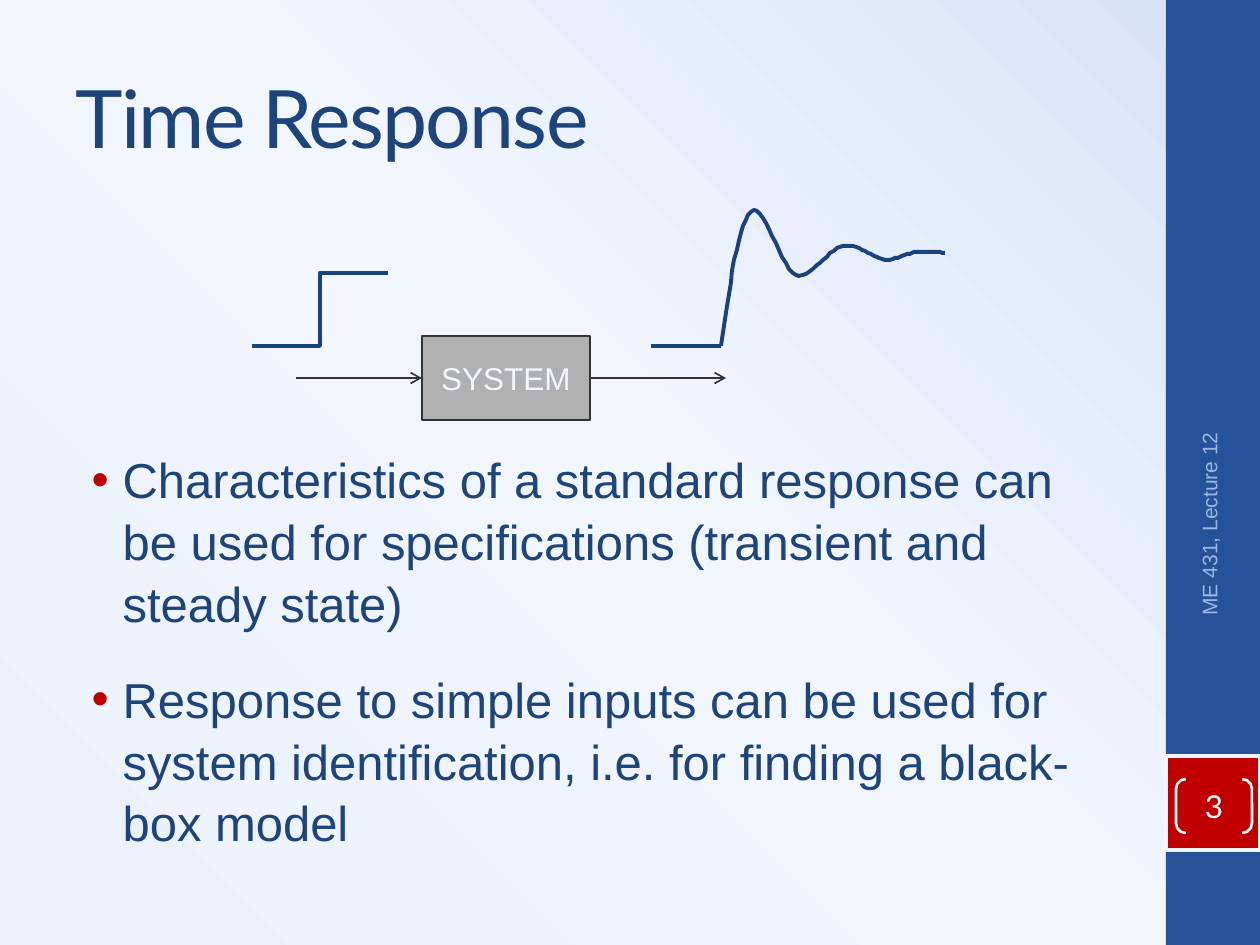
from pptx import Presentation
from pptx.dml.color import RGBColor
from pptx.enum.shapes import MSO_CONNECTOR, MSO_SHAPE
from pptx.enum.text import MSO_ANCHOR, MSO_AUTO_SIZE, PP_ALIGN
from pptx.oxml import parse_xml
from pptx.oxml.ns import nsdecls, qn
from pptx.util import Pt

PX = 914400 / 126  # EMU in one px
STRAIGHT, ELBOW = MSO_CONNECTOR.STRAIGHT, MSO_CONNECTOR.ELBOW
RECTANGLE, BRACKETS = MSO_SHAPE.RECTANGLE, MSO_SHAPE.DOUBLE_BRACKET
TOP, MIDDLE = MSO_ANCHOR.TOP, MSO_ANCHOR.MIDDLE
LEFT, CENTER, RIGHT = PP_ALIGN.LEFT, PP_ALIGN.CENTER, PP_ALIGN.RIGHT

NAVY = RGBColor(0x1E, 0x44, 0x7C)
CURVE_BLUE = RGBColor(0x1B, 0x42, 0x7C)
BAND_BLUE = RGBColor(0x26, 0x53, 0x97)
PALE_BLUE = RGBColor(0x98, 0xB7, 0xE5)
ICE = RGBColor(0xF2, 0xF6, 0xFC)
RED = RGBColor(0xC0, 0x00, 0x00)
GRAY = RGBColor(0xB0, 0xB0, 0xB0)
DARK = RGBColor(0x33, 0x33, 0x33)
WHITE = RGBColor(0xFF, 0xFF, 0xFF)

BACKDROP = [(0, "EAF1FA"), (52, "F1F6FD"), (100, "D6E2F5")]
BULLETS = [
    "Characteristics of a standard response can be used for specifications "
    "(transient and steady state)",
    "Response to simple inputs can be used for system identification, "
    "i.e. for finding a black-box model",
]
# Damped oscillation: a start point, then Bezier segments of three points
RESPONSE = [
    (469, 148),
    (478, 87), (486, 25), (499, 14),
    (512, 1), (528, 70), (544, 77),
    (559, 82), (577, 50), (591, 48),
    (606, 45), (620, 60), (633, 62),
    (645, 62), (656, 54), (667, 54),
    (677, 53), (685, 54), (693, 55),
]


def px(length):
    return round(length * PX)


def place(shape, left, top, width, height):
    shape.left, shape.top = px(left), px(top)
    shape.width, shape.height = px(width), px(height)


def write(para, text, font, size, color, align=LEFT):
    para.alignment = align
    span = para.add_run()
    span.text = text
    span.font.name, span.font.size = font, Pt(size)
    span.font.color.rgb = color
    return span


def add_box(page, kind, box, fill=None, line=None, weight=1):
    shape = page.shapes.add_shape(kind, *map(px, box))
    shape.shadow.inherit = False
    if fill is None:
        shape.fill.background()
    else:
        shape.fill.solid()
        shape.fill.fore_color.rgb = fill
    if line is None:
        shape.line.fill.background()
    else:
        shape.line.color.rgb, shape.line.width = line, Pt(weight)
    shape.text_frame.vertical_anchor = MIDDLE
    return shape


def add_line(page, start, end, color, weight, kind=STRAIGHT, arrow=False):
    line = page.shapes.add_connector(kind, *map(px, start + end))
    line.line.color.rgb, line.line.width = color, Pt(weight)
    if arrow:
        line.line._get_or_add_ln().append(
            parse_xml(f'<a:tailEnd {nsdecls("a")} type="arrow"/>'))
    line._element.spPr.append(parse_xml(f'<a:effectLst {nsdecls("a")}/>'))


def bezier_points(points, steps=14):
    for first in range(0, len(points) - 1, 3):
        a, b, c, d = points[first:first + 4]
        for step in range(1, steps + 1):
            t = step / steps
            u = 1 - t
            yield tuple(u**3 * a[i] + 3 * u * u * t * b[i] + 3 * u * t * t * c[i]
                        + t**3 * d[i] for i in (0, 1))


def paint_background(page):
    page.background.fill.solid()
    properties = page._element.cSld.find(qn("p:bg")).find(qn("p:bgPr"))
    stops = "".join(f'<a:gs pos="{at * 1000}"><a:srgbClr val="{color}"/></a:gs>'
                    for at, color in BACKDROP)
    properties.replace(properties[0], parse_xml(
        f'<a:gradFill {nsdecls("a")} rotWithShape="1"><a:gsLst>{stops}</a:gsLst>'
        '<a:path path="circle"><a:fillToRect t="100000" r="100000"/></a:path>'
        '</a:gradFill>'))


def add_sidebar(page, left, top, width, height):
    add_box(page, RECTANGLE, (left, top, width, height), BAND_BLUE)
    add_box(page, RECTANGLE, (left, top + 756, width, width), RED, ICE, 2)

    # Footer, read from bottom to top
    footer = page.shapes.add_textbox(px(left - 120), px(top + 558), px(326), px(50))
    footer.rotation = 270
    frame = footer.text_frame
    frame.word_wrap, frame.vertical_anchor = True, MIDDLE
    write(frame.paragraphs[0], "ME 431, Lecture 12", "Arial", 12, PALE_BLUE, RIGHT)

    # Slide number in brackets
    number = add_box(page, BRACKETS, (left + 10, top + 779, 76, 54), None, WHITE, 1.5)
    number.adjustments[0] = 0.18
    frame = number.text_frame
    frame.margin_left = frame.margin_right = 0
    frame.margin_top = frame.margin_bottom = 0
    write(frame.paragraphs[0], "3", "Lato", 18, WHITE, CENTER)


def add_title(page, *box):
    title = page.shapes.title
    place(title, *box)
    frame = title.text_frame
    frame.vertical_anchor, frame.auto_size = MIDDLE, MSO_AUTO_SIZE.NONE
    span = write(frame.paragraphs[0], "Time Response", "Lato", 46, NAVY)
    span._r.get_or_add_rPr().set("spc", "-100")


def add_bullets(page, *box):
    body = page.placeholders[1]
    place(body, *box)
    frame = body.text_frame
    frame.vertical_anchor, frame.auto_size = TOP, MSO_AUTO_SIZE.NONE
    frame.margin_top = px(227)  # keeps the list below the diagram
    for index, text in enumerate(BULLETS):
        para = frame.add_paragraph() if index else frame.paragraphs[0]
        write(para, text, "Arial", 28, NAVY)
        para.line_spacing = 1.05
        para.space_before = Pt(19.5 if index else 0)
        properties = para._p.get_or_add_pPr()
        properties.set("marL", str(px(47)))
        properties.set("indent", str(px(-31)))
        for bullet in (f'<a:buClr {nsdecls("a")}><a:srgbClr val="{RED}"/></a:buClr>',
                       f'<a:buFont {nsdecls("a")} typeface="Arial"/>',
                       f'<a:buChar {nsdecls("a")} char="•"/>'):
            properties.append(parse_xml(bullet))


def add_diagram(page, left, top):
    def at(x, y):
        return left + x, top + y

    # System block with its input and output arrows
    system = add_box(page, RECTANGLE, at(170, 138) + (168, 84), GRAY, DARK)
    system.text_frame.word_wrap = False
    write(system.text_frame.paragraphs[0], "SYSTEM", "Arial", 18, ICE, CENTER)
    for start, end in ((44, 170), (338, 474)):
        add_line(page, at(start, 180), at(end, 180), DARK, 1, arrow=True)

    # Step input
    add_line(page, at(0, 148), at(136, 75), CURVE_BLUE, 2.25, ELBOW)

    # Response: flat start, then damped oscillation
    add_line(page, at(399, 148), at(469, 148), CURVE_BLUE, 2.25)
    builder = page.shapes.build_freeform(*at(*RESPONSE[0]), scale=PX)
    builder.add_line_segments([at(*point) for point in bezier_points(RESPONSE)],
                              close=False)
    curve = builder.convert_to_shape()
    curve.shadow.inherit = False
    curve.fill.background()
    curve.line.color.rgb, curve.line.width = CURVE_BLUE, Pt(2.25)


def main():
    deck = Presentation()
    deck.slide_width, deck.slide_height = px(1260), px(945)
    page = deck.slides.add_slide(deck.slide_layouts[1])
    paint_background(page)
    add_sidebar(page, 1166, 0, 94, 945)
    add_title(page, 63, 38, 1050, 157)
    add_bullets(page, 63, 220, 1030, 662)
    add_diagram(page, 252, 198)
    deck.save("out.pptx")


if __name__ == "__main__":
    main()
